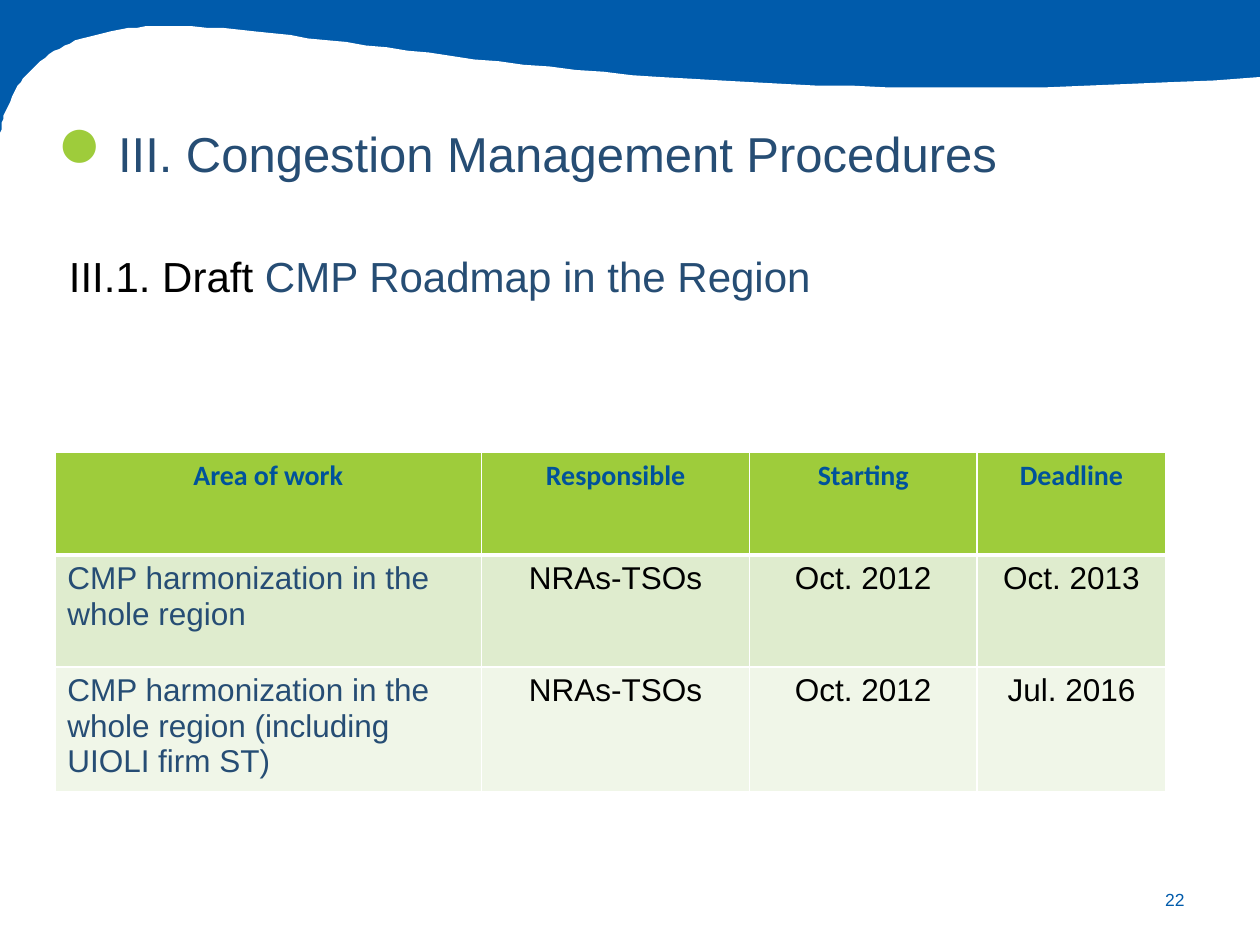
from lxml import etree
from pptx import Presentation
from pptx.dml.color import RGBColor
from pptx.enum.shapes import MSO_SHAPE
from pptx.enum.text import MSO_ANCHOR, MSO_AUTO_SIZE, PP_ALIGN
from pptx.oxml.ns import qn
from pptx.util import Pt

RECT = MSO_SHAPE.RECTANGLE
TOP, MIDDLE, BOTTOM = MSO_ANCHOR.TOP, MSO_ANCHOR.MIDDLE, MSO_ANCHOR.BOTTOM
LEFT, CENTER, RIGHT = PP_ALIGN.LEFT, PP_ALIGN.CENTER, PP_ALIGN.RIGHT
FIXED = MSO_AUTO_SIZE.NONE

WHITE = RGBColor(0xFF, 0xFF, 0xFF)
BLACK = RGBColor(0x00, 0x00, 0x00)
BLUE = RGBColor(0x00, 0x5B, 0xAB)
NAVY = RGBColor(0x26, 0x4D, 0x74)
HEAD = RGBColor(0x00, 0x52, 0x9B)
GREEN = RGBColor(0x9E, 0xCC, 0x3B)
LIGHT = RGBColor(0xDF, 0xEC, 0xCE)
PALE = RGBColor(0xF0, 0xF6, 0xE8)


def add_run(para, text, size, color, font="Arial", bold=False):
    run = para.add_run()
    run.text = text
    run.font.name = font
    run.font.size = Pt(size)
    run.font.bold = bold
    run.font.color.rgb = color


def place(shape, box, anchor, align):
    shape.left, shape.top, shape.width, shape.height = map(Pt, box)
    frame = shape.text_frame
    frame.word_wrap = True
    frame.auto_size = FIXED
    frame.vertical_anchor = anchor
    para = frame.paragraphs[0]
    para.alignment = align
    return para


prs = Presentation()
prs.slide_width, prs.slide_height = Pt(720), Pt(540)
slide = prs.slides.add_slide(prs.slide_layouts[1])
shapes = slide.shapes
title, body = slide.placeholders

band = shapes.add_shape(RECT, Pt(0), Pt(0), Pt(720), Pt(82.8))
curves = [
    [(720, 44), (367, 67.7), (199, 15), (94.3, 15)],
    [(94.3, 15), (16.5, 15), (2, 57), (0, 79)],
]
steps = 40
points = []
for a, b, c, d in curves:
    for i in range(1, steps + 1):
        t = i / steps
        u = 1 - t
        points.append([
            u**3 * p + 3 * u * u * t * q + 3 * u * t * t * r + t**3 * s
            for p, q, r, s in zip(a, b, c, d)
        ])
points += [(0, 540), (720, 540)]
path = shapes.build_freeform(720, 44, scale=Pt(1))
path.add_line_segments(points, close=True)
page = path.convert_to_shape()
for shape, color in ((band, BLUE), (page, WHITE)):
    shape.shadow.inherit = False
    shape.fill.solid()
    shape.fill.fore_color.rgb = color
    shape.line.fill.background()
for shape in (page, band):
    shapes._spTree.remove(shape._element)
    shapes._spTree.insert(2, shape._element)

para = place(title, (0, 60.5, 630, 48), TOP, CENTER)
add_run(para, "III. Congestion Management Procedures", 28, NAVY)
lines = [para]
para = place(body, (25.2, 134, 686, 42.5), TOP, LEFT)
add_run(para, "III.1. Draft ", 24, BLACK)
add_run(para, "CMP Roadmap in the Region", 24, NAVY)
lines.append(para)
for para in lines:
    props = para._p.get_or_add_pPr()
    props.set("marL", str(Pt(28)))
    props.set("indent", str(Pt(-21)))
    etree.SubElement(props, qn("a:buNone"))
    para.line_spacing = 1.2
    para.space_before = Pt(0)
    para.space_after = Pt(2)

labels = [
    ("●", (25.2, 41, 39.6, 67.7), BOTTOM, CENTER, 44, GREEN),
    ("22", (643.7, 499.7, 40.3, 28.8), MIDDLE, RIGHT, 10, BLUE),
]
for text, box, anchor, align, size, color in labels:
    label = shapes.add_textbox(*map(Pt, box))
    add_run(place(label, box, anchor, align), text, size, color)

rows = [
    ("Area of work", "Responsible", "Starting", "Deadline"),
    ("CMP harmonization in the whole region",
     "NRAs-TSOs", "Oct. 2012", "Oct. 2013"),
    ("CMP harmonization in the whole region (including UIOLI firm ST)",
     "NRAs-TSOs", "Oct. 2012", "Jul. 2016"),
]
widths = [244, 153, 130, 108]
heights = [58.5, 64, 71.5]
fills = [GREEN, LIGHT, PALE]
table = shapes.add_table(
    len(rows), len(widths), Pt(31.3), Pt(258.7),
    Pt(sum(widths)), Pt(sum(heights))).table
for col, width in zip(table.columns, widths):
    col.width = Pt(width)
for r, row in enumerate(rows):
    table.rows[r].height = Pt(heights[r])
    for c, text in enumerate(row):
        cell = table.cell(r, c)
        props = cell._tc.get_or_add_tcPr()
        for side in ("lnL", "lnR", "lnT", "lnB"):
            thick = (r, side) in ((0, "lnB"), (1, "lnT"))
            line = etree.SubElement(props, qn("a:" + side))
            line.set("w", str(Pt(3 if thick else 1)))
            fill = etree.SubElement(line, qn("a:solidFill"))
            etree.SubElement(fill, qn("a:srgbClr")).set("val", str(WHITE))
        cell.fill.solid()
        cell.fill.fore_color.rgb = fills[r]
        para = cell.text_frame.paragraphs[0]
        para.alignment = LEFT if r and c == 0 else CENTER
        if r == 0:
            add_run(para, text, 16, HEAD, "Calibri", True)
        else:
            add_run(para, text, 18, BLACK if c else NAVY)

prs.save("out.pptx")
